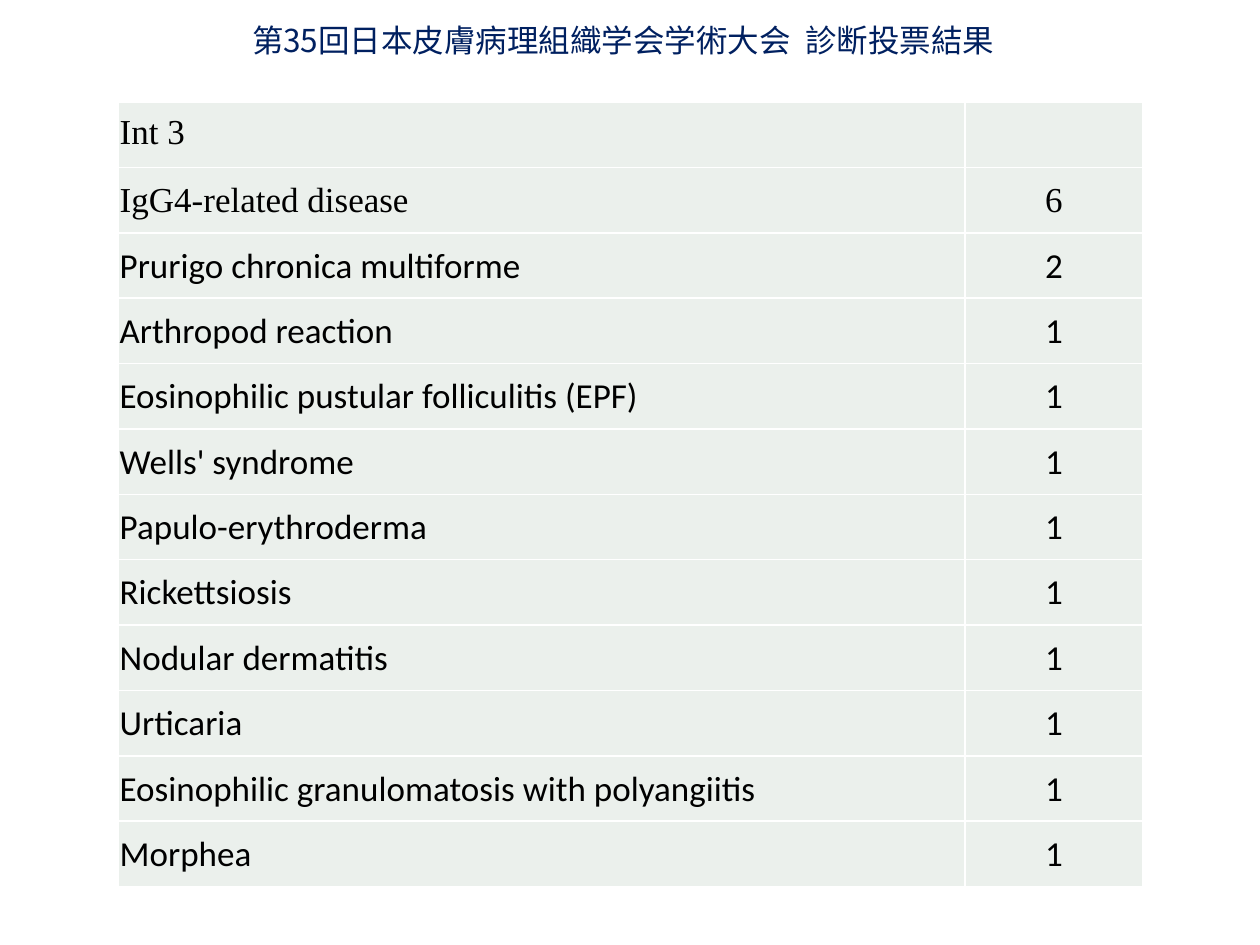
from lxml.etree import SubElement
from pptx import Presentation
from pptx.dml.color import RGBColor
from pptx.enum.text import MSO_ANCHOR, MSO_AUTO_SIZE, PP_ALIGN
from pptx.oxml.ns import qn
from pptx.util import Inches, Pt

CELL_FILL, BORDER = "EBF0EC", "FFFFFF"
VOTES = [
    ("Int 3", ""),
    ("IgG4-related disease", "6"),
    ("Prurigo chronica multiforme", "2"),
    ("Arthropod reaction", "1"),
    ("Eosinophilic pustular folliculitis (EPF)　", "1"),
    ("Wells' syndrome", "1"),
    ("Papulo-erythroderma", "1"),
    ("Rickettsiosis", "1"),
    ("Nodular dermatitis", "1"),
    ("Urticaria", "1"),
    ("Eosinophilic granulomatosis with polyangiitis", "1"),
    ("Morphea", "1"),
]


def add_run(p, text, font, size, color):
    r = p.add_run()
    r.text = text
    r.font.name, r.font.size = font, Pt(size)
    r.font.color.rgb = RGBColor.from_string(color)
    SubElement(r.font._element, qn("a:ea"), typeface=font)


def add_borders(cell, color):
    """Draw 1 pt lines on all four sides, placed before the fill as the schema asks."""
    tcPr = cell._tc.get_or_add_tcPr()
    for i, side in enumerate(("lnL", "lnR", "lnT", "lnB")):
        ln = SubElement(tcPr, qn(f"a:{side}"), w=str(Pt(1)))
        SubElement(SubElement(ln, qn("a:solidFill")), qn("a:srgbClr"), val=color)
        tcPr.insert(i, ln)


prs = Presentation()
prs.slide_width, prs.slide_height = Inches(10), Inches(7.5)
s = prs.slides.add_slide(prs.slide_layouts[5])

# Title
title = s.shapes.title
title.left, title.top = Inches(1.9), Inches(0.12)
title.width, title.height = Inches(6.2), Inches(0.4)
tf = title.text_frame
tf.word_wrap = True
tf.auto_size = MSO_AUTO_SIZE.NONE
tf.vertical_anchor = MSO_ANCHOR.TOP
p = tf.paragraphs[0]
p.alignment = PP_ALIGN.LEFT
add_run(p, "第35回日本皮膚病理組織学会学術大会  診断投票結果", "Noto Sans CJK JP", 18, "002060")

# Vote table
col_widths, row_height = (6.72, 1.41), 6.23 / len(VOTES)
table = s.shapes.add_table(
    len(VOTES), len(col_widths), Inches(0.94), Inches(0.81),
    Inches(sum(col_widths)), Inches(row_height * len(VOTES))).table
table.first_row = table.horz_banding = False
for column, width in zip(table.columns, col_widths):
    column.width = Inches(width)

for i, vote in enumerate(VOTES):
    table.rows[i].height = Inches(row_height)
    font = "Times New Roman" if i < 2 else "Calibri"
    for j, text in enumerate(vote):
        cell = table.cell(i, j)
        cell.fill.solid()
        cell.fill.fore_color.rgb = RGBColor.from_string(CELL_FILL)
        add_borders(cell, BORDER)
        cell.vertical_anchor = MSO_ANCHOR.MIDDLE
        cell.margin_left = cell.margin_right = cell.margin_top = Inches(0.01)
        cell.margin_bottom = Inches(0 if i else 0.05)
        p = cell.text_frame.paragraphs[0]
        p.alignment = PP_ALIGN.CENTER if j else PP_ALIGN.LEFT
        if text:
            add_run(p, text, font, 20, "000000")

prs.save("out.pptx")
